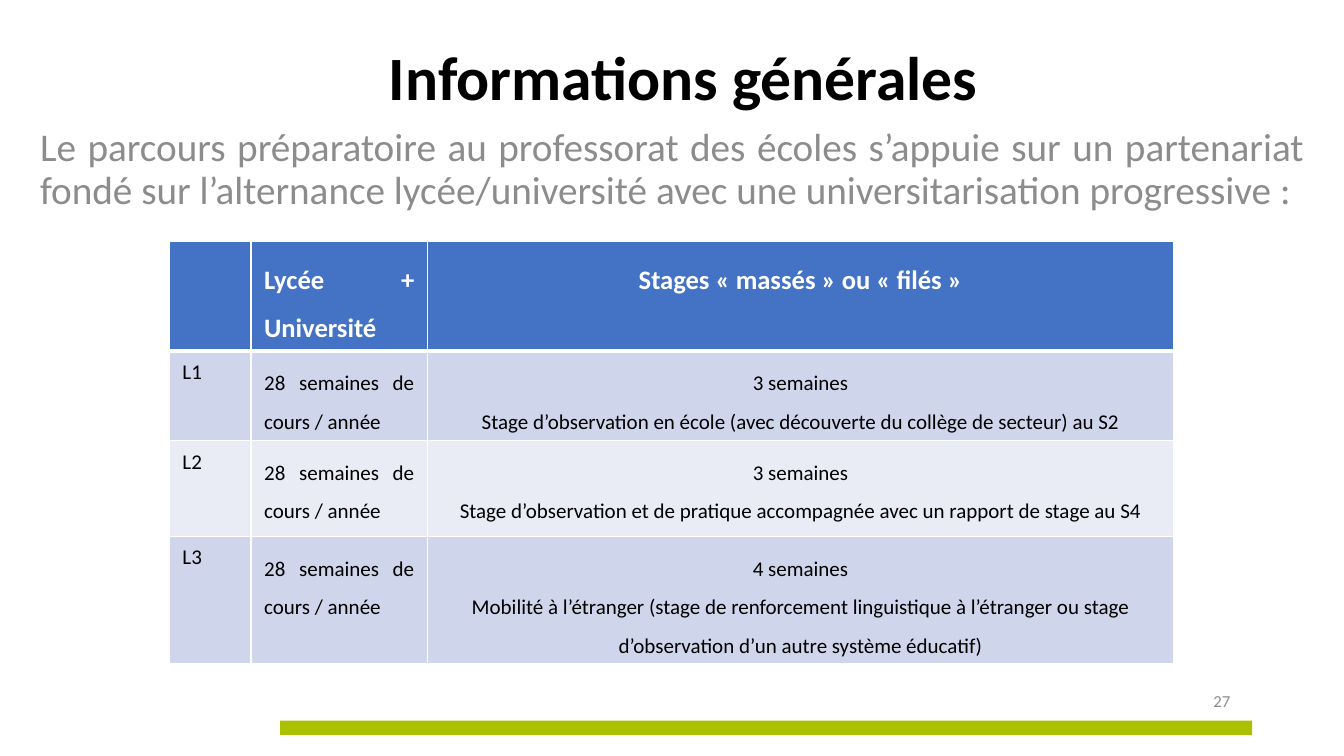
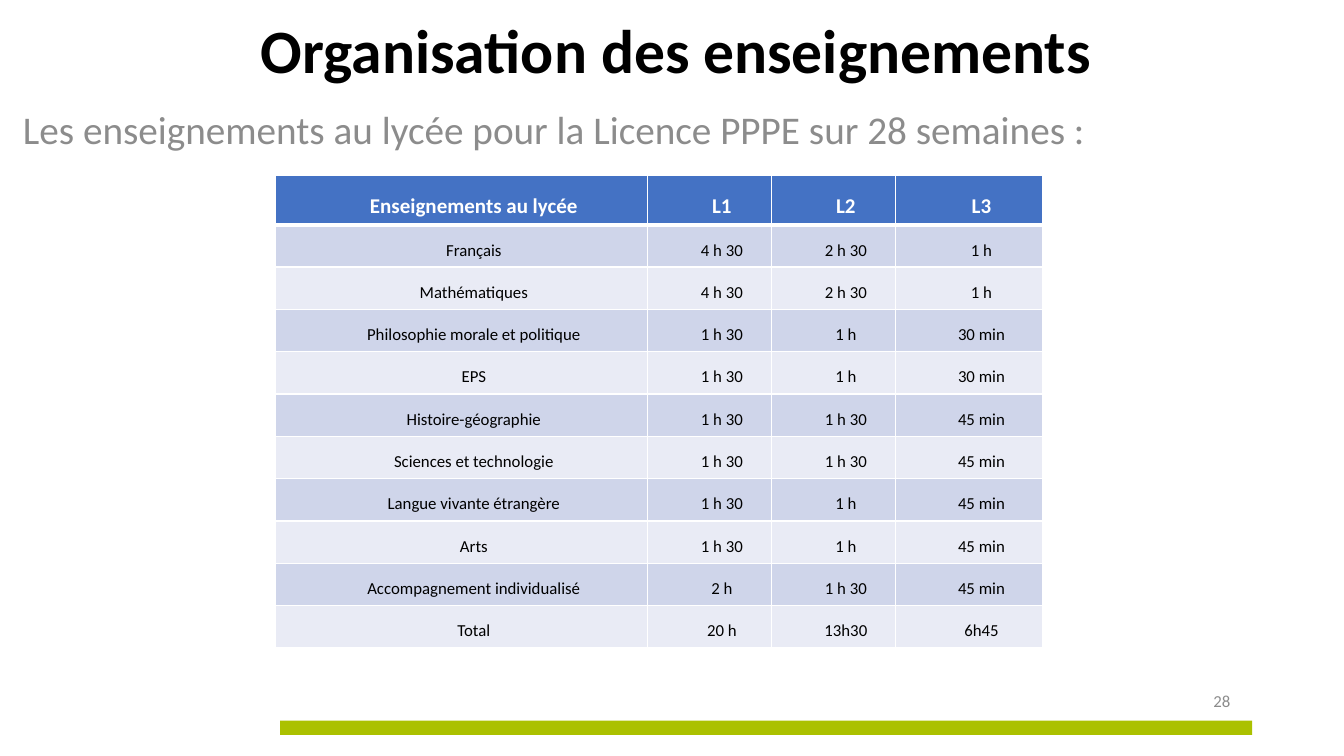
from dataclasses import dataclass

from lxml import etree
from pptx import Presentation
from pptx.dml.color import RGBColor
from pptx.enum.shapes import MSO_SHAPE
from pptx.enum.text import MSO_ANCHOR, PP_ALIGN
from pptx.oxml.ns import qn
from pptx.util import Pt

PX = 9144  # EMU per px, 100 px to the inch
LEFT, CENTER, JUSTIFY = PP_ALIGN.LEFT, PP_ALIGN.CENTER, PP_ALIGN.JUSTIFY
TOP, MIDDLE, BOTTOM = MSO_ANCHOR.TOP, MSO_ANCHOR.MIDDLE, MSO_ANCHOR.BOTTOM


@dataclass(frozen=True)
class Theme:
    font: str = "Calibri"
    black: str = "000000"
    white: str = "FFFFFF"
    grey: str = "8C8C8C"
    green: str = "ABC100"
    header: str = "4472C4"
    bands: tuple = ("CFD5EA", "E9EBF5")
    title_size: int = 44
    intro_size: int = 28
    number_size: int = 12
    thin_border: int = 1
    thick_border: int = 3


THEME = Theme()

SLIDES = [
    {
        "number": "27",
        "title": "Informations générales",
        "title_top": 35,
        "intro": "Le parcours préparatoire au professorat des écoles s’appuie sur un "
                 "partenariat fondé sur l’alternance lycée/université avec une "
                 "universitarisation progressive :",
        "intro_box": (30, 122, 1273, 169),
        "intro_align": JUSTIFY,
        "table_at": (168, 239),
        "columns": [81, 175, 740],
        "row_heights": [102, 83, 95, 120],
        "aligns": [JUSTIFY, JUSTIFY, CENTER],
        "spacings": [1.07, 1.5, 1.5],
        "margins": (13, 7),
        "indent": 0,
        "sizes": (19, 15),
        "rows": [
            ["", "Lycée + Université", "Stages « massés » ou « filés »"],
            ["L1", "28 semaines de cours / année",
             "3 semaines\nStage d’observation en école (avec découverte du collège "
             "de secteur) au S2"],
            ["L2", "28 semaines de cours / année",
             "3 semaines\nStage d’observation et de pratique accompagnée avec un "
             "rapport de stage au S4"],
            ["L3", "28 semaines de cours / année",
             "4 semaines\nMobilité à l’étranger (stage de renforcement linguistique à "
             "l’étranger ou stage d’observation d’un autre système éducatif)"],
        ],
    },
    {
        "number": "28",
        "title": "Organisation des enseignements ",
        "title_top": 8,
        "intro": "Les enseignements au lycée pour la Licence PPPE sur 28 semaines :",
        "intro_box": (13, 105, 1260, 131),
        "intro_align": LEFT,
        "table_at": (273, 174),
        "columns": [369, 123, 123, 146],
        "row_heights": [49] + [42] * 10,
        "aligns": [CENTER] * 4,
        "spacings": [1.5] * 4,
        "margins": (10, 5),
        "indent": 25,
        "sizes": (15, 12),
        "rows": [
            ["Enseignements au lycée", "L1", "L2", "L3"],
            ["Français", "4 h 30", "2 h 30", "1 h"],
            ["Mathématiques", "4 h 30", "2 h 30", "1 h"],
            ["Philosophie morale et politique", "1 h 30", "1 h", "30 min"],
            ["EPS", "1 h 30", "1 h", "30 min"],
            ["Histoire-géographie", "1 h 30", "1 h 30", "45 min"],
            ["Sciences et technologie", "1 h 30", "1 h 30", "45 min"],
            ["Langue vivante étrangère", "1 h 30", "1 h", "45 min"],
            ["Arts", "1 h 30", "1 h", "45 min"],
            ["Accompagnement individualisé", "2 h", "1 h 30", "45 min"],
            ["Total", "20 h", "13h30", "6h45"],
        ],
    },
]


def write_text(text_frame, text, size, color, align, spacing=1.0, bold=False, indent=0):
    text_frame.text = text
    for paragraph in text_frame.paragraphs:
        paragraph.alignment = align
        paragraph.line_spacing = spacing
        if indent:
            paragraph._p.get_or_add_pPr().set("marL", str(indent * PX))
        for run in paragraph.runs:
            run.font.name = THEME.font
            run.font.size = Pt(size)
            run.font.bold = bold
            run.font.color.rgb = RGBColor.from_string(color)


def add_border(cell, side, width):
    """Draw one white side (L, R, T or B) of a cell; call before filling it."""
    line = etree.SubElement(cell._tc.get_or_add_tcPr(), qn(f"a:ln{side}"), w=str(Pt(width)))
    fill = etree.SubElement(line, qn("a:solidFill"))
    etree.SubElement(fill, qn("a:srgbClr"), val=THEME.white)


presentation = Presentation()
presentation.slide_width = 1333 * PX
presentation.slide_height = 750 * PX
blank_layout = presentation.slide_layouts[6]

for content in SLIDES:
    slide = presentation.slides.add_slide(blank_layout)

    band = slide.shapes.add_shape(
        MSO_SHAPE.RECTANGLE, 278 * PX, 715 * PX, 964 * PX, 14 * PX)
    band.shadow.inherit = False
    band.fill.solid()
    band.fill.fore_color.rgb = RGBColor.from_string(THEME.green)
    band.line.fill.background()

    text_boxes = [
        (content["title"], (67, content["title_top"], 1222, 83), BOTTOM,
         THEME.title_size, THEME.black, CENTER, 0.9, True),
        (content["intro"], content["intro_box"], TOP,
         THEME.intro_size, THEME.grey, content["intro_align"], 0.9, False),
        (content["number"], (1183, 675, 58, 40), MIDDLE,
         THEME.number_size, THEME.grey, CENTER, 1.0, False),
    ]
    for text, box, anchor, size, color, align, spacing, bold in text_boxes:
        text_frame = slide.shapes.add_textbox(*(length * PX for length in box)).text_frame
        text_frame.word_wrap = True
        text_frame.vertical_anchor = anchor
        write_text(text_frame, text, size, color, align, spacing, bold)

    rows, columns, heights = content["rows"], content["columns"], content["row_heights"]
    left, top = content["table_at"]
    table = slide.shapes.add_table(
        len(rows), len(columns), left * PX, top * PX,
        sum(columns) * PX, sum(heights) * PX).table
    for column, width in zip(table.columns, columns):
        column.width = width * PX
    for row, height in zip(table.rows, heights):
        row.height = height * PX

    header_size, body_size = content["sizes"]
    margin_x, margin_y = content["margins"]
    for row_index, row in enumerate(rows):
        is_header = row_index == 0
        for column_index, text in enumerate(row):
            cell = table.cell(row_index, column_index)
            cell.margin_left = cell.margin_right = margin_x * PX
            cell.margin_top = cell.margin_bottom = margin_y * PX
            thick_side = {0: "B", 1: "T"}.get(row_index)
            for side in "LRTB":
                add_border(cell, side, THEME.thick_border if side == thick_side
                           else THEME.thin_border)
            cell.fill.solid()
            cell.fill.fore_color.rgb = RGBColor.from_string(
                THEME.header if is_header else THEME.bands[(row_index - 1) % 2])
            write_text(
                cell.text_frame, text,
                header_size if is_header else body_size,
                THEME.white if is_header else THEME.black,
                content["aligns"][column_index], content["spacings"][column_index],
                is_header, content["indent"])

presentation.save("out.pptx")
